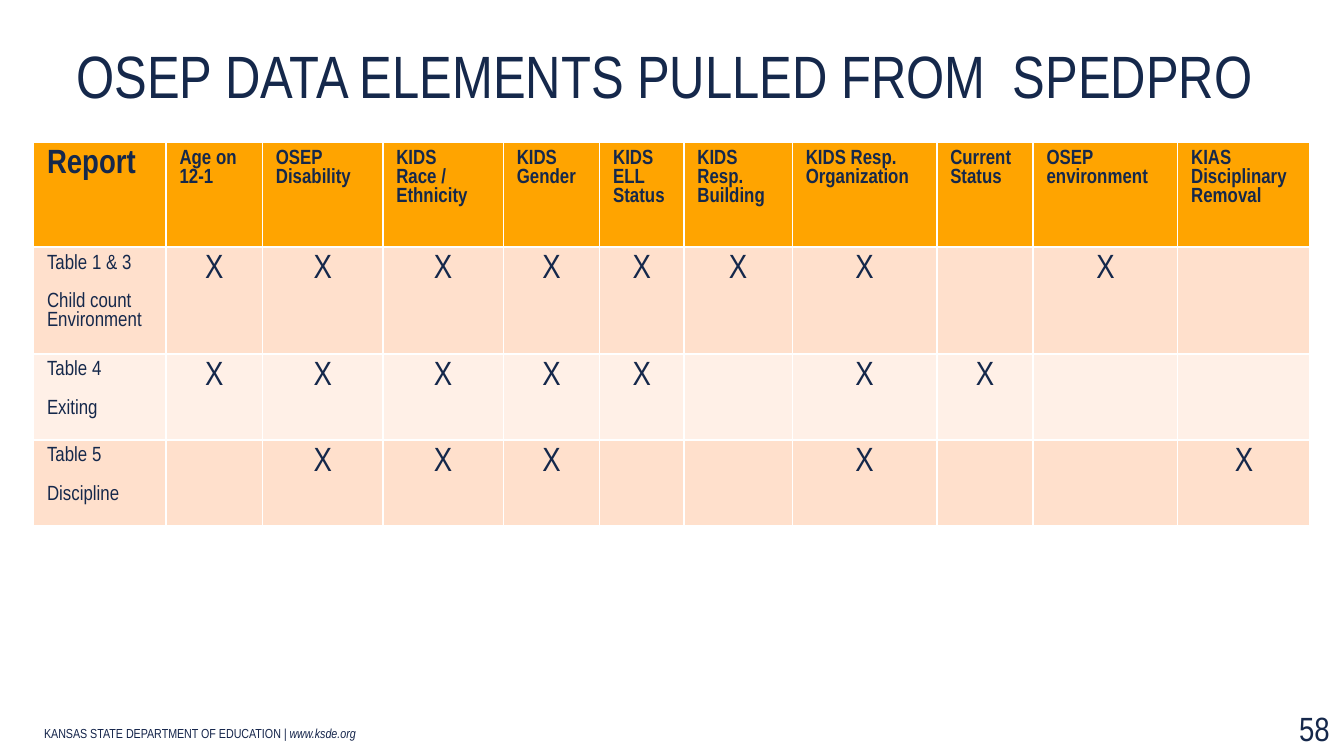
from pptx import Presentation
from pptx import util as u
from pptx.dml.color import RGBColor
from pptx.enum import text

COLORS = {"navy": "15284B", "footer": "15254B", "header": "FFA400",
          "band": "FFE0CC", "light": "FFF0E7"}
FONT = "Arial Narrow"
HEADERS = ["Report", "Age on 12-1", "OSEP Disability", "KIDS Race /  Ethnicity",
           "KIDS Gender", "KIDS ELL Status", "KIDS Resp. Building",
           "KIDS Resp. Organization", "Current Status", "OSEP environment",
           "KIAS Disciplinary Removal"]
REPORTS = [(["Table 1 & 3", "Child count", "Environment"], {1, 2, 3, 4, 5, 6, 7, 9}),
           (["Table 4", "Exiting"], {1, 2, 3, 4, 5, 7, 8}),
           (["Table 5", "Discipline"], {2, 3, 4, 7, 10})]
WIDTHS = [0.99, 0.72, 0.9, 0.9, 0.72, 0.63, 0.81, 1.08, 0.72, 1.08, 0.99]
HEIGHTS = [0.78, 0.68, 0.64, 0.64]


class Deck:
    def __init__(self, width, height):
        self.prs = Presentation()
        self.prs.slide_width = u.Inches(width)
        self.prs.slide_height = u.Inches(height)
        self.s = self.prs.slides.add_slide(self.prs.slide_layouts[5])

    def run(self, p, words, size, color="navy", bold=False, italic=False):
        r = p.add_run()
        r.text = words
        r.font.name = FONT
        r.font.size = u.Pt(size)
        r.font.bold = bold
        r.font.italic = italic
        r.font.color.rgb = RGBColor.from_string(COLORS[color])

    def title(self, box, words):
        sp = self.s.shapes.title
        sp.left, sp.top, sp.width, sp.height = map(u.Inches, box)
        tf = sp.text_frame
        tf.word_wrap = True
        tf.auto_size = text.MSO_AUTO_SIZE.NONE
        tf.vertical_anchor = text.MSO_ANCHOR.BOTTOM
        tf.margin_left, tf.margin_bottom = u.Inches(0.4), 0
        p = tf.paragraphs[0]
        p.alignment = text.PP_ALIGN.LEFT
        self.run(p, words, 32)

    def textbox(self, box, runs, align=text.PP_ALIGN.LEFT, anchor=text.MSO_ANCHOR.TOP):
        tf = self.s.shapes.add_textbox(*map(u.Inches, box)).text_frame
        tf.word_wrap = True
        tf.vertical_anchor = anchor
        p = tf.paragraphs[0]
        p.alignment = align
        for words, style in runs:
            self.run(p, words, **style)

    def cell(self, cell, lines, fill, size, bold=False, align=text.PP_ALIGN.LEFT):
        cell.fill.solid()
        cell.fill.fore_color.rgb = RGBColor.from_string(COLORS[fill])
        tf = cell.text_frame
        for i, line in enumerate(lines):
            p = tf.add_paragraph() if i else tf.paragraphs[0]
            p.alignment = align
            if i == 1:
                p.space_before = u.Pt(10.4)
            self.run(p, line, size, bold=bold)

    def table(self, box):
        tbl = self.s.shapes.add_table(len(HEIGHTS), len(WIDTHS), *map(u.Inches, box)).table
        scale = box[2] / sum(WIDTHS)
        for column, width in zip(tbl.columns, WIDTHS):
            column.width = u.Inches(width * scale)
        for row, height in zip(tbl.rows, HEIGHTS):
            row.height = u.Inches(height)
        for c, header in enumerate(HEADERS):
            self.cell(tbl.cell(0, c), [header], "header", 11 if c else 18, bold=True)
        for r, (labels, marked) in enumerate(REPORTS, 1):
            fill = "band" if r % 2 else "light"
            self.cell(tbl.cell(r, 0), labels, fill, 11)
            for c in range(1, len(HEADERS)):
                self.cell(tbl.cell(r, c), ["X"] if c in marked else [], fill, 18,
                          align=text.PP_ALIGN.CENTER)


def main():
    deck = Deck(10, 5.625)
    footer = {"size": 7, "color": "footer"}
    deck.textbox((0.23, 5.34, 4.77, 0.22),
                 [("KANSAS STATE DEPARTMENT OF EDUCATION ", footer),
                  ("| www.ksde.org", {**footer, "italic": True})],
                 anchor=text.MSO_ANCHOR.BOTTOM)
    deck.title((0.17, -0.36, 9.75, 1.18), "OSEP DATA ELEMENTS PULLED FROM  SPEDPRO")
    deck.table((0.25, 1.06, 9.5, sum(HEIGHTS)))
    deck.textbox((9.53, 5.22, 0.5, 0.4), [("58", {"size": 18})],
                 align=text.PP_ALIGN.CENTER)
    deck.prs.save("out.pptx")


if __name__ == "__main__":
    main()
